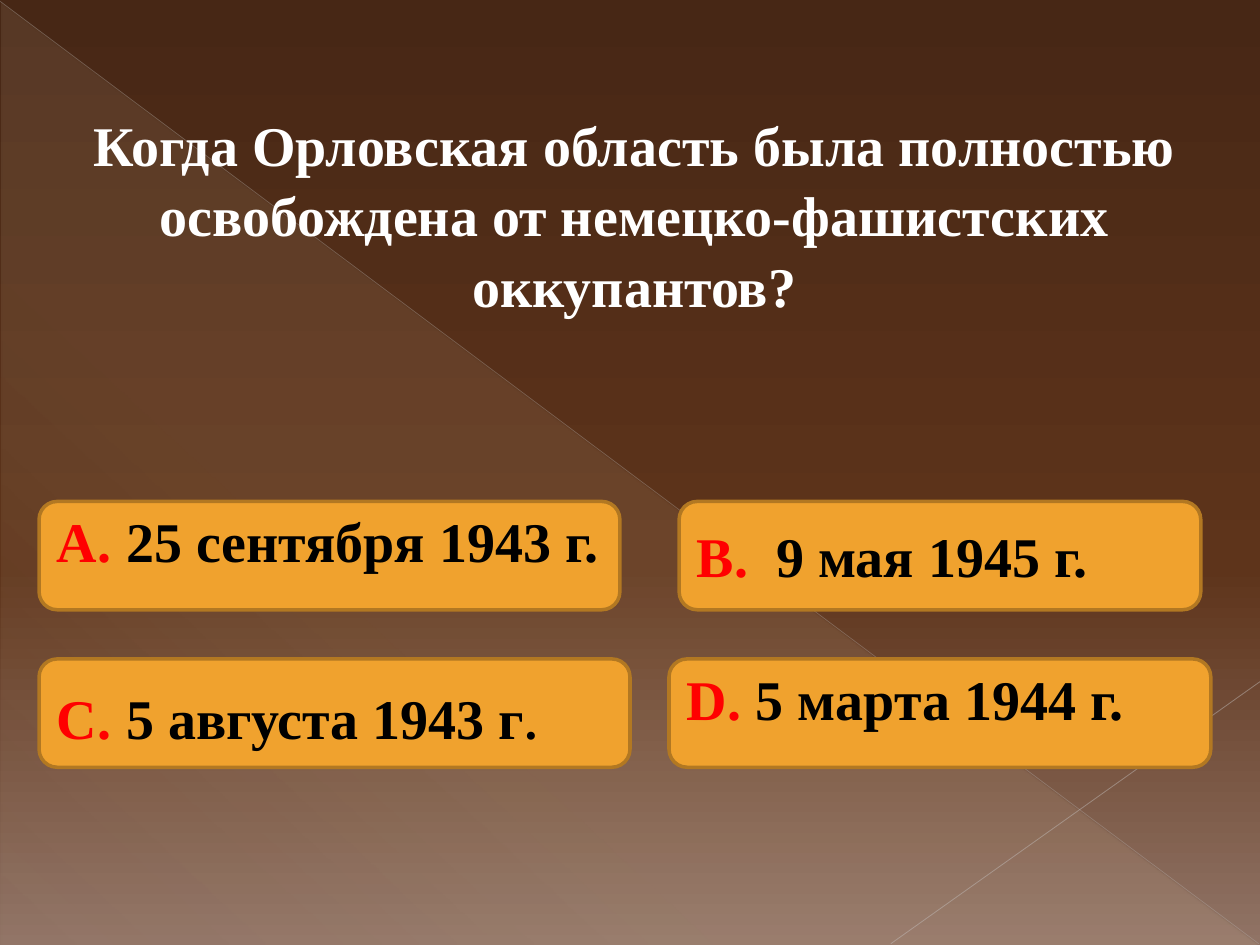
"""Builds a quiz slide with one question and four answer buttons."""
from lxml import etree
from pptx import Presentation
from pptx.dml.color import RGBColor
from pptx.enum import shapes, text
from pptx.oxml import ns
from pptx.util import Inches, Pt

COLORS = {
    "top": "472715", "middle": "5E341B", "bottom": "907365",
    "glow": "FBEEC9", "long_line": "BCB7B4", "short_line": "C4BFBD",
    "button": "F0A22E", "border": "B27822",
    "label": "FF0000", "answer": "000000", "question": "FFFFFF",
}
FONT = "Times New Roman"
TOP_ROW, BOTTOM_ROW = 3.98, 5.23
BUTTON_HEIGHT = 0.86
INSET = 0.05


def rgb(name):
    """Return the named colour."""
    return RGBColor.from_string(COLORS[name])


def add_child(parent, tag, **attributes):
    """Append an XML element with the given attributes."""
    values = {key: str(value) for key, value in attributes.items()}
    return etree.SubElement(parent, ns.qn(tag), values)


def set_alpha(color, opacity):
    """Set the opacity of a colour element in percent."""
    add_child(color, "a:alpha", val=opacity * 1000)


def set_gradient(fill, element, stops, angle):
    """Give a fill a linear gradient of (position, colour, opacity) stops."""
    fill.solid()
    solid = element.xpath(".//a:solidFill")[0]
    gradient = etree.Element(ns.qn("a:gradFill"), rotWithShape="1")
    stop_list = add_child(gradient, "a:gsLst")
    for position, name, opacity in stops:
        stop = add_child(stop_list, "a:gs", pos=position * 1000)
        set_alpha(add_child(stop, "a:srgbClr", val=COLORS[name]), opacity)
    add_child(gradient, "a:lin", ang=angle * 60000, scaled=0)
    solid.getparent().replace(solid, gradient)


def add_line(page, start, end, color, width, opacity):
    """Draw a thin translucent line."""
    line = page.shapes.add_connector(
        shapes.MSO_CONNECTOR.STRAIGHT, *map(Inches, start + end))
    line.line.color.rgb = rgb(color)
    line.line.width = Pt(width)
    properties = line.element.spPr
    set_alpha(properties.xpath(".//a:srgbClr")[0], opacity)
    add_child(properties, "a:effectLst")


def add_span(para, content, size=32, color="answer", bold=True):
    """Add formatted text to a paragraph."""
    span = para.add_run()
    span.text = content
    span.font.name = FONT
    span.font.size = Pt(size)
    span.font.bold = bold
    span.font.color.rgb = rgb(color)


def set_frame(box, top=INSET, bottom=INSET):
    """Wrap and centre the text of a box vertically between its insets."""
    frame = box.text_frame
    frame.word_wrap = True
    frame.auto_size = text.MSO_AUTO_SIZE.NONE
    frame.vertical_anchor = text.MSO_ANCHOR.MIDDLE
    frame.margin_left = frame.margin_right = Inches(0.1)
    frame.margin_top, frame.margin_bottom = Inches(top), Inches(bottom)
    return frame.paragraphs[0]


def add_backdrop(page):
    """Draw the gradient background, the light triangle and its lines."""
    set_gradient(page.background.fill, page.element,
                 [(0, "top", 100), (60, "middle", 100), (100, "bottom", 100)], 90)
    triangle = page.shapes.add_shape(
        shapes.MSO_SHAPE.RIGHT_TRIANGLE, *map(Inches, (0.01, 0.02, 9.98, 7.48)))
    triangle.shadow.inherit = False
    triangle.line.fill.background()
    set_gradient(triangle.fill, triangle.element.spPr,
                 [(0, "glow", 10), (70, "glow", 8), (100, "glow", 1)], 133)
    add_line(page, (0, 0.01), (9.99, 7.49), "long_line", 0.39, 35)
    add_line(page, (10, 5.41), (7.07, 7.49), "short_line", 0.47, 45)


def add_button(page, left, top, width, label, answer, gap=0.55, insets=(INSET, INSET)):
    """Draw an answer button with a red letter."""
    button = page.shapes.add_shape(
        shapes.MSO_SHAPE.FLOWCHART_ALTERNATE_PROCESS,
        *map(Inches, (left, top, width, BUTTON_HEIGHT)))
    button.shadow.inherit = False
    button.fill.solid()
    button.fill.fore_color.rgb = rgb("button")
    button.line.color.rgb = rgb("border")
    button.line.width = Pt(2)
    para = set_frame(button, *insets)
    para.alignment = text.PP_ALIGN.LEFT
    tabs = add_child(para._p.get_or_add_pPr(), "a:tabLst")
    add_child(tabs, "a:tab", pos=Inches(gap), algn="l")
    add_span(para, f"{label}\t", color="label")
    add_span(para, answer)
    return para


def add_question(page, content):
    """Place the question in the title, in front of the backdrop."""
    title = page.shapes.title
    title.left, title.top, title.width, title.height = map(
        Inches, (0.23, 0.81, 9.61, 2.56))
    title.element.getparent().append(title.element)
    para = set_frame(title, bottom=0.85)
    para.alignment = text.PP_ALIGN.CENTER
    para.line_spacing = 1.05
    add_span(para, content, color="question")


def main():
    """Build and save the slide."""
    deck = Presentation()
    deck.slide_width, deck.slide_height = Inches(10), Inches(7.5)
    page = deck.slides.add_slide(deck.slide_layouts[5])
    add_backdrop(page)
    raised, lowered = (INSET, 0.29), (0.11, INSET)
    add_button(page, 0.31, TOP_ROW, 4.61, "А.", "25 сентября 1943 г.", insets=raised)
    para = add_button(page, 0.31, BOTTOM_ROW, 4.69, "С.", "5 августа 1943 г", insets=lowered)
    add_span(para, ".", size=28)
    add_button(page, 5.39, TOP_ROW, 4.14, "В.", "9 мая 1945 г.", gap=0.63)
    add_button(page, 5.31, BOTTOM_ROW, 4.3, "D.", "5 марта 1944 г.", insets=raised)
    add_question(page, "Когда Орловская область была полностью освобождена "
                       "от немецко-фашистских оккупантов?")
    deck.save("out.pptx")


if __name__ == "__main__":
    main()
